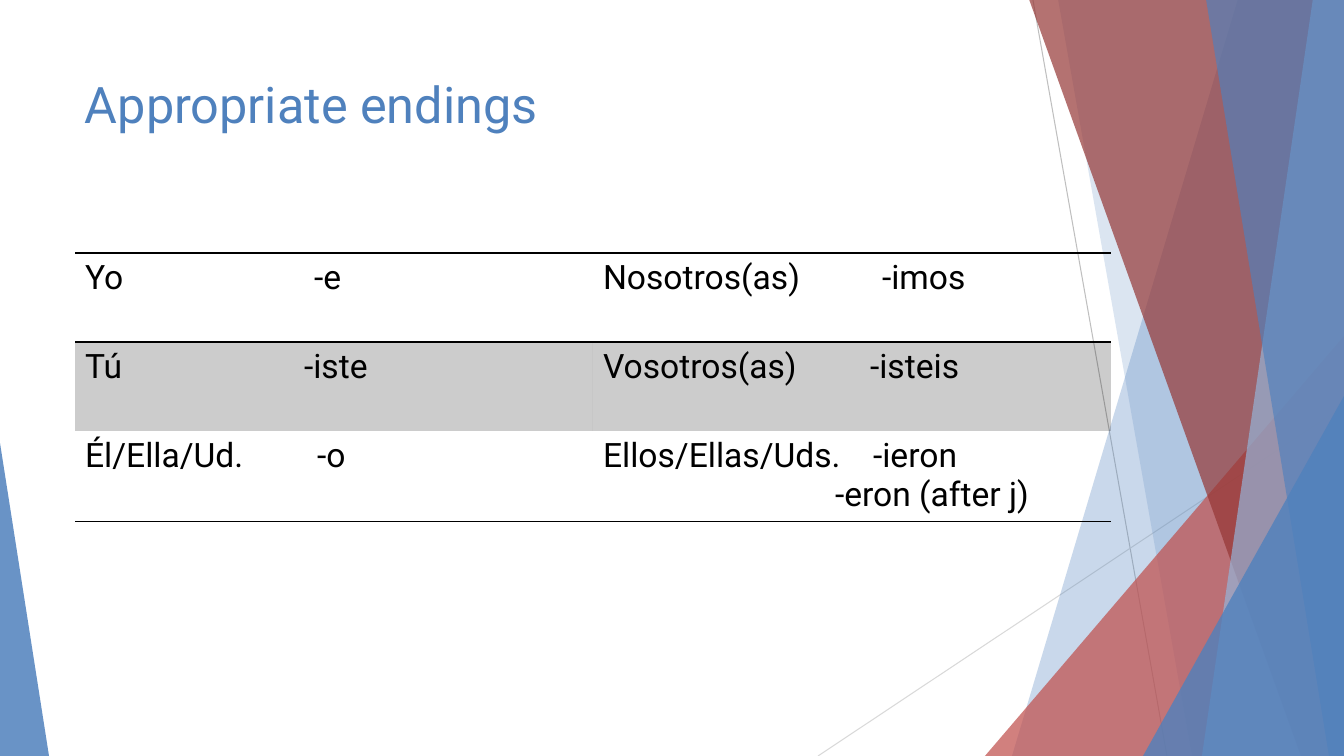
from dataclasses import dataclass

from lxml import etree
from pptx import Presentation
from pptx.dml.color import RGBColor
from pptx.enum.shapes import MSO_CONNECTOR, MSO_SHAPE
from pptx.enum.text import MSO_ANCHOR
from pptx.oxml.ns import qn
from pptx.util import Pt

STRAIGHT = MSO_CONNECTOR.STRAIGHT
TRIANGLE = MSO_SHAPE.ISOSCELES_TRIANGLE
TOP = MSO_ANCHOR.TOP
EMU_PER_PX = 914400 / 100.8
WIDTH, HEIGHT = 1344, 756


@dataclass(frozen=True)
class Theme:
    font: str = "Roboto"
    title_size: int = 36
    body_size: int = 24
    blue: str = "4F81BD"
    pale_blue: str = "95B3D7"
    red: str = "C0504D"
    dark_red: str = "953735"
    black: str = "000000"
    gray: str = "BFBFBF"
    pale_gray: str = "D9D9D9"


THEME = Theme()

LINES = [
    ((1033, 0), (1167, HEIGHT), THEME.gray),
    ((WIDTH, 406), (818, HEIGHT), THEME.pale_gray),
]
BANDS_BEHIND = [
    (1238, 1012, THEME.blue, 30),
    (1058, 1192, THEME.blue, 20),
]
BANDS_IN_FRONT = [
    (1029, 1301, THEME.dark_red, 70),
    (1313, 1202, THEME.pale_blue, 70),
    (1206, 1329, THEME.blue, 65),
]
RED_CORNER = ((985, 336, 359, 420), 1, THEME.red, 72)
BLUE_CORNERS = [
    ((1143, 396, 201, 360), 1, THEME.blue, 80),
    ((0, 443, 49, 313), 0, THEME.blue, 85),
]
ENDINGS = [
    [[("Yo", "-e", 229)], [("Nosotros(as)", "-imos", 279)]],
    [[("Tú", "-iste", 219)], [("Vosotros(as)", "-isteis", 267)]],
    [
        [("Él/Ella/Ud.", "-o", 232)],
        [("Ellos/Ellas/Uds.", "-ieron", 270), ("", "-eron (after j)", 232)],
    ],
]
RULED_EDGES = ["TB", "T", "B"]
SHADED_ROW = 1


def px(length):
    return round(length * EMU_PER_PX)


def px_box(box):
    return [px(length) for length in box]


def fill_solid(fill, properties, color, opacity):
    fill.solid()
    fill.fore_color.rgb = RGBColor.from_string(color)
    color_element = properties.find(qn("a:solidFill")).find(qn("a:srgbClr"))
    etree.SubElement(color_element, qn("a:alpha"), val=str(opacity * 1000))


def style_shape(shape, color, opacity):
    shape.shadow.inherit = False
    fill_solid(shape.fill, shape.element.spPr, color, opacity)
    shape.line.fill.background()


def add_text(paragraph, text, size, color):
    run = paragraph.add_run()
    run.text = text
    run.font.name = THEME.font
    run.font.size = Pt(size)
    run.font.color.rgb = RGBColor.from_string(color)


def add_line(slide, start, end, color):
    connector = slide.shapes.add_connector(STRAIGHT, *px_box(start + end))
    connector.line.color.rgb = RGBColor.from_string(color)
    connector.line.width = Pt(0.75)
    etree.SubElement(connector.element.spPr, qn("a:effectLst"))


def add_band(slide, box, top_left, bottom_left, color, opacity):
    left, top, width, height = box
    right, bottom = left + width, top + height
    builder = slide.shapes.build_freeform(left + top_left, top, scale=EMU_PER_PX)
    builder.add_line_segments(
        [(right, top), (right, bottom), (left + bottom_left, bottom)], close=True
    )
    style_shape(builder.convert_to_shape(), color, opacity)


def add_corner(slide, box, apex, color, opacity):
    triangle = slide.shapes.add_shape(TRIANGLE, *px_box(box))
    triangle.adjustments[0] = apex
    style_shape(triangle, color, opacity)


def add_backdrop(slide, box):
    for line in LINES:
        add_line(slide, *line)
    for band in BANDS_BEHIND:
        add_band(slide, box, *band)
    add_corner(slide, *RED_CORNER)
    for band in BANDS_IN_FRONT:
        add_band(slide, box, *band)
    for corner in BLUE_CORNERS:
        add_corner(slide, *corner)


def add_title(slide, box, text):
    frame = slide.shapes.add_textbox(*px_box(box)).text_frame
    frame.word_wrap = True
    frame.vertical_anchor = TOP
    add_text(frame.paragraphs[0], text, THEME.title_size, THEME.blue)


def add_ending(paragraph, pronoun, ending, offset):
    properties = paragraph._p.get_or_add_pPr()
    if pronoun:
        tabs = etree.SubElement(properties, qn("a:tabLst"))
        etree.SubElement(tabs, qn("a:tab"), pos=str(px(offset)), algn="l")
        add_text(paragraph, pronoun + "\t", THEME.body_size, THEME.black)
    else:
        properties.set("marL", str(px(offset)))
        properties.set("indent", "0")
    add_text(paragraph, ending, THEME.body_size, THEME.black)


def set_borders(properties, ruled):
    for edge in "LRTB":
        border = etree.SubElement(properties, qn(f"a:ln{edge}"), w=str(Pt(1)))
        if edge in ruled:
            solid = etree.SubElement(border, qn("a:solidFill"))
            etree.SubElement(solid, qn("a:srgbClr"), val=THEME.black)
        else:
            etree.SubElement(border, qn("a:noFill"))


def add_endings_table(slide, box):
    row_count, column_count = len(ENDINGS), len(ENDINGS[0])
    table = slide.shapes.add_table(row_count, column_count, *px_box(box)).table
    table.first_row = False
    table.horz_banding = False
    for row_index, row in enumerate(ENDINGS):
        for column_index, endings in enumerate(row):
            cell = table.cell(row_index, column_index)
            properties = cell._tc.get_or_add_tcPr()
            set_borders(properties, RULED_EDGES[row_index])
            if row_index == SHADED_ROW:
                fill_solid(cell.fill, properties, THEME.black, 20)
            else:
                cell.fill.background()
            frame = cell.text_frame
            for index, ending in enumerate(endings):
                paragraph = frame.add_paragraph() if index else frame.paragraphs[0]
                add_ending(paragraph, *ending)


def main():
    presentation = Presentation()
    presentation.slide_width = px(WIDTH)
    presentation.slide_height = px(HEIGHT)
    slide = presentation.slides.add_slide(presentation.slide_layouts[6])
    add_backdrop(slide, (0, -1, WIDTH, HEIGHT + 1))
    add_title(slide, (75, 68, 948, 145), "Appropriate endings")
    add_endings_table(slide, (75, 253, 1036, 267))
    presentation.save("out.pptx")


if __name__ == "__main__":
    main()
